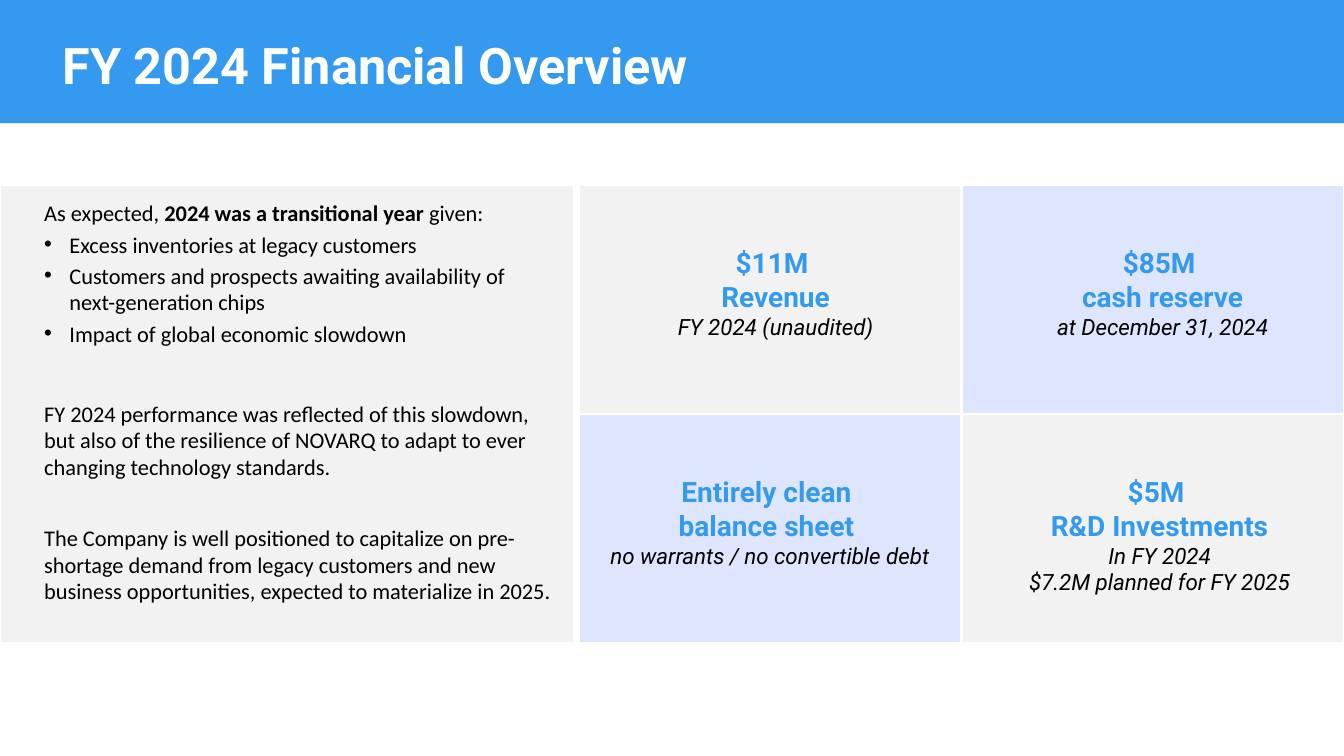
from dataclasses import dataclass
from itertools import product

from lxml.etree import SubElement as Sub
from pptx import Presentation
from pptx.dml.color import RGBColor as Rgb
from pptx.enum.shapes import MSO_SHAPE as Shape
from pptx.enum.text import MSO_ANCHOR as Anchor, MSO_AUTO_SIZE as Fit, PP_ALIGN as Align
from pptx.oxml.ns import qn
from pptx.util import Pt


@dataclass(frozen=True)
class Theme:
    blue: str = "339AF0"
    gray: str = "F2F2F2"
    pale: str = "DEE5FE"
    white: str = "FFFFFF"
    black: str = "000000"
    head: str = "Roboto"
    body: str = "Calibri"
    title: int = 36
    big: int = 20
    text: int = 16
    thin: float = 1
    thick: float = 2.25


T = Theme()
TITLE = {"name": T.head, "size": Pt(T.title), "bold": True, "color": T.white}
BIG = {"name": T.head, "size": Pt(T.big), "bold": True, "color": T.blue}
NOTE = {"name": T.head, "size": Pt(T.text), "italic": True, "color": T.black}
BODY = {"name": T.body, "size": Pt(T.text), "color": T.black}
STRONG = {**BODY, "bold": True}

STORY = [
    (0, False, [("As expected, ", BODY), ("2024 was a transitional year", STRONG),
                (" given:", BODY)]),
    (3, True, [("Excess inventories at legacy customers", BODY)]),
    (3, True, [("Customers and prospects awaiting availability of "
                "next-generation chips", BODY)]),
    (3, True, [("Impact of global economic slowdown", BODY)]),
    (38, False, [("FY 2024 performance was reflected of this slowdown, but also of "
                  "the resilience of NOVARQ to adapt to ever changing technology "
                  "standards.", BODY)]),
    (31, False, [("The Company is well positioned to capitalize on pre-shortage "
                  "demand from legacy customers and new business opportunities, "
                  "expected to materialize in 2025.", BODY)]),
]
TILES = [
    (8, ["$11M ", "Revenue"], ["FY 2024 (unaudited)"]),
    (11.5, ["$85M ", "cash reserve"], ["at December 31, 2024"]),
    (4, ["Entirely clean ", "balance sheet "], ["no warrants / no convertible debt"]),
    (9.3, ["$5M ", "R&D Investments"], ["In FY 2024", "$7.2M planned for FY 2025"]),
]


def place(*box):
    return [Pt(n) for n in box]


def paint(fill, color):
    fill.solid()
    fill.fore_color.rgb = Rgb.from_string(color)


def write(para, text, look):
    run = para.add_run()
    run.text = text
    for key, value in look.items():
        if key == "color":
            run.font.color.rgb = Rgb.from_string(value)
        else:
            setattr(run.font, key, value)


def bullet(para):
    props = para._p.get_or_add_pPr()
    props.set("marL", str(Pt(18)))
    props.set("indent", str(Pt(-18)))
    Sub(props, qn("a:buFont"), typeface="Arial")
    Sub(props, qn("a:buChar"), char="•")


def edge(cell, side, width):
    line = Sub(cell._tc.get_or_add_tcPr(), qn("a:ln" + side), w=str(Pt(width)))
    Sub(Sub(line, qn("a:solidFill")), qn("a:srgbClr"), val=T.white)


def note(slide, box):
    frame = slide.shapes.add_textbox(*place(*box)).text_frame
    frame.word_wrap = True
    return frame


def lines(frame, count):
    return [frame.paragraphs[0]] + [frame.add_paragraph() for _ in range(count - 1)]


def grid(slide, box, rows, cols):
    table = slide.shapes.add_table(rows, cols, *place(*box)).table
    table.first_row = table.horz_banding = False
    for row, col in product(range(rows), range(cols)):
        cell = table.cell(row, col)
        inner = {"L": col > 0, "R": col < cols - 1, "T": row > 0, "B": row < rows - 1}
        for side, thick in inner.items():
            edge(cell, side, T.thick if thick else T.thin)
        paint(cell.fill, T.pale if (row + col) % 2 else T.gray)


def header(slide, box):
    x, y, w, h = box
    title = slide.shapes.title
    band = slide.shapes.add_shape(Shape.RECTANGLE, *place(*box))
    band.shadow.inherit = False
    band.line.fill.background()
    paint(band.fill, T.blue)
    title.element.addprevious(band.element)
    spot = place(x + 44.6, y + 12.2, w - 114, h - 21)
    for key, value in zip(("left", "top", "width", "height"), spot):
        setattr(title, key, value)
    frame = title.text_frame
    form = {"auto_size": Fit.NONE, "vertical_anchor": Anchor.MIDDLE, "word_wrap": True}
    form.update({"margin_" + side: 0 for side in ("left", "right", "top", "bottom")})
    for key, value in form.items():
        setattr(frame, key, value)
    para = frame.paragraphs[0]
    para.alignment = Align.LEFT
    write(para, "FY 2024 Financial Overview", TITLE)


def story(slide, box):
    x, y, w, h = box
    grid(slide, box, 1, 1)
    frame = note(slide, (x + 24.5, y + 6.5, w - 32.5, h - 26))
    for para, (gap, dot, runs) in zip(lines(frame, len(STORY)), STORY):
        if dot:
            bullet(para)
        if gap:
            para.space_before = Pt(gap)
        for text, look in runs:
            write(para, text, look)


def tiles(slide, box):
    x, y, w, h = box
    wide, high = w / 2, h / 2
    grid(slide, box, 2, 2)
    for (row, col), (shift, heads, subs) in zip(product(range(2), repeat=2), TILES):
        frame = note(slide, (x + col * wide + shift, y + row * high + 39.6, 264, 76))
        texts = [(text, BIG) for text in heads] + [(text, NOTE) for text in subs]
        for para, (text, look) in zip(lines(frame, len(texts)), texts):
            para.alignment = Align.CENTER
            write(para, text, look)


def main():
    deck = Presentation()
    deck.slide_width, deck.slide_height = Pt(960), Pt(540)
    slide = deck.slides.add_slide(deck.slide_layouts[5])
    header(slide, (0, 0, 960, 88))
    story(slide, (0, 132.5, 409.7, 326.4))
    tiles(slide, (414, 132.5, 546, 326.4))
    deck.save("out.pptx")


if __name__ == "__main__":
    main()
